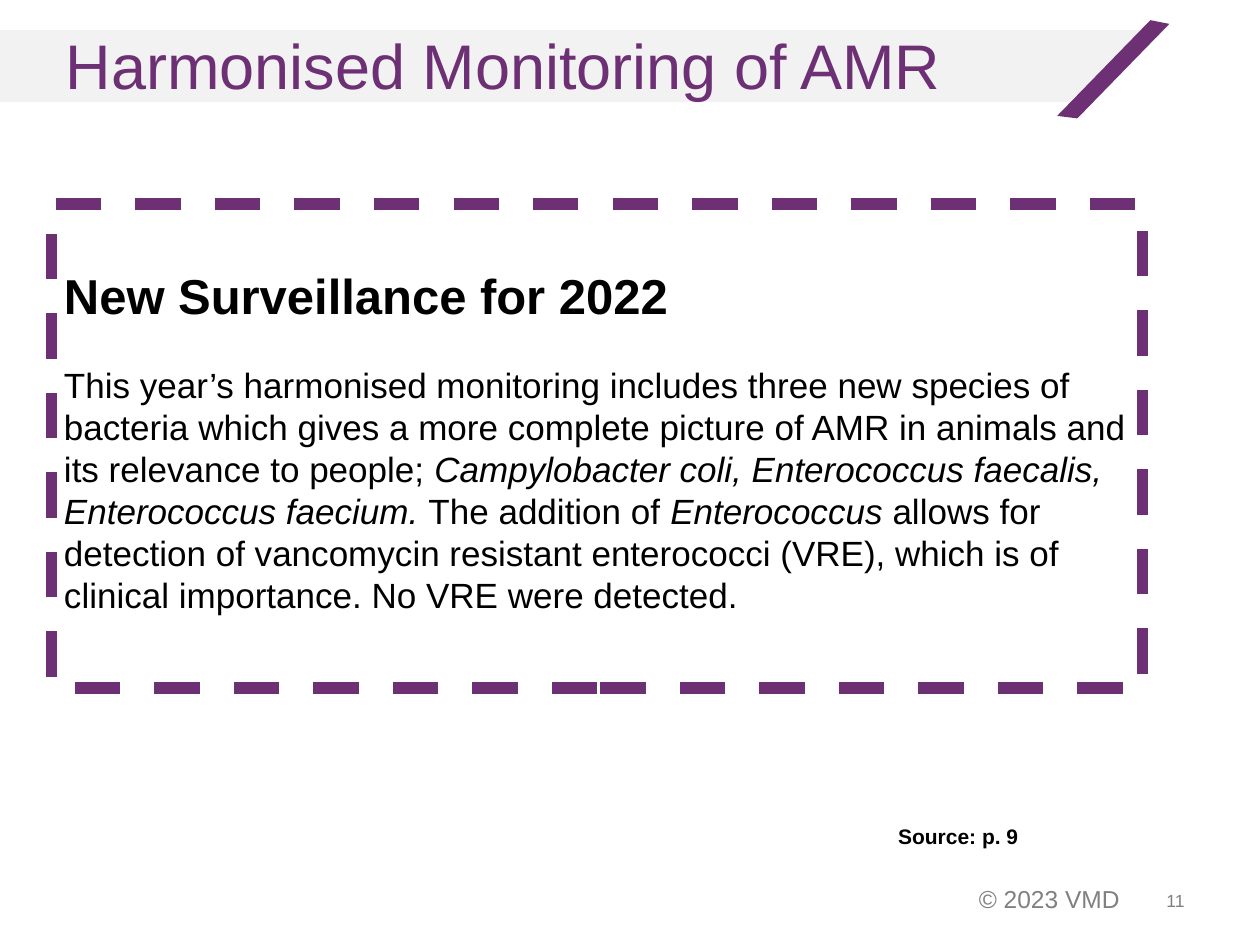
import pptx
import pptx.dml.color
import pptx.enum.dml
import pptx.enum.shapes
import pptx.enum.text
import pptx.util

Inches = pptx.util.Inches
Pt = pptx.util.Pt
RGBColor = pptx.dml.color.RGBColor
Align = pptx.enum.text.PP_ALIGN
Anchor = pptx.enum.text.MSO_ANCHOR

PURPLE = RGBColor(0x6D, 0x30, 0x75)
BAND = RGBColor(0xF2, 0xF2, 0xF2)
GREY = RGBColor(0x80, 0x80, 0x80)
NUMBER_GREY = RGBColor(0x7F, 0x7F, 0x7F)
BLACK = RGBColor(0, 0, 0)

FINDINGS = [
    ("This year’s harmonised monitoring includes three new species of bacteria "
     "which gives a more complete picture of AMR in animals and its relevance "
     "to people; ", False),
    ("Campylobacter coli, Enterococcus faecalis, Enterococcus faecium. ", True),
    ("The addition of ", False),
    ("Enterococcus ", True),
    ("allows for detection of vancomycin resistant enterococci (VRE), which is "
     "of clinical importance. No VRE were detected.", False),
]


def style(p, size, color, bold=False, align=Align.LEFT):
    p.alignment = align
    p.font.name = "Arial"
    p.font.size = Pt(size)
    p.font.bold = bold
    p.font.color.rgb = color


def add_polygon(slide, points, color):
    """Add a borderless filled outline through points given in inches."""
    corners = [(Inches(x), Inches(y)) for x, y in points]
    builder = slide.shapes.build_freeform(*corners[0], scale=1.0)
    builder.add_line_segments(corners[1:], close=True)
    sp = builder.convert_to_shape()
    sp.shadow.inherit = False
    sp.fill.solid()
    sp.fill.fore_color.rgb = color
    sp.line.fill.background()


def add_label(slide, box, text, size, color, wrap=True, anchor=Anchor.TOP, **look):
    sp = slide.shapes.add_textbox(*map(Inches, box))
    tf = sp.text_frame
    tf.word_wrap = wrap
    tf.vertical_anchor = anchor
    p = tf.paragraphs[0]
    p.text = text
    style(p, size, color, **look)


def add_title(slide, text):
    sp = slide.shapes.title
    sp.left, sp.top, sp.width, sp.height = map(Inches, (0.52, 0.17, 8.5, 0.79))
    tf = sp.text_frame
    tf.auto_size = pptx.enum.text.MSO_AUTO_SIZE.NONE
    tf.vertical_anchor = Anchor.TOP
    tf.margin_left = tf.margin_right = tf.margin_bottom = 0
    tf.margin_top = Inches(0.04)
    p = tf.paragraphs[0]
    p.text = text
    style(p, 36, PURPLE)


def add_findings_panel(slide):
    sp = slide.shapes.add_shape(
        pptx.enum.shapes.MSO_SHAPE.RECTANGLE,
        Inches(0.41), Inches(1.62), Inches(8.66), Inches(3.84))
    sp.shadow.inherit = False
    sp.fill.background()
    sp.line.color.rgb = PURPLE
    sp.line.width = Pt(6.5)
    sp.line.dash_style = pptx.enum.dml.MSO_LINE.DASH

    tf = sp.text_frame
    tf.word_wrap = True
    tf.vertical_anchor = Anchor.TOP
    tf.margin_top = Inches(0.49)
    heading = tf.paragraphs[0]
    heading.text = "New Surveillance for 2022"
    style(heading, 28, BLACK, bold=True)

    p = tf.add_paragraph()
    p.space_before = Pt(22)
    style(p, 20, BLACK)
    for text, italic in FINDINGS:
        r = p.add_run()
        r.text = text
        r.font.italic = italic


def main():
    prs = pptx.Presentation()
    prs.slide_width = Inches(10)
    prs.slide_height = Inches(7.5)
    slide = prs.slides.add_slide(prs.slide_layouts[5])

    add_label(slide, (7.67, 6.97, 1.33, 0.34), "© 2023 VMD", 14, GREY, wrap=False)
    add_label(slide, (7.17, 6.95, 2.33, 0.4), "11", 10, NUMBER_GREY,
              anchor=Anchor.MIDDLE, align=Align.RIGHT)
    add_label(slide, (7.03, 6.49, 2.28, 0.3), "Source: p. 9", 12, BLACK, bold=True)
    add_findings_panel(slide)

    add_polygon(slide, [(0, 0.24), (9.25, 0.24), (8.48, 0.81), (0, 0.81)], BAND)
    add_polygon(slide, [(9.13, 0.16), (9.28, 0.19), (8.55, 0.94), (8.39, 0.92)], PURPLE)
    add_title(slide, "Harmonised Monitoring of AMR")
    # The title placeholder comes first by default; bring it in front of the band.
    slide.shapes._spTree.append(slide.shapes.title._element)

    prs.save("out.pptx")


if __name__ == "__main__":
    main()
